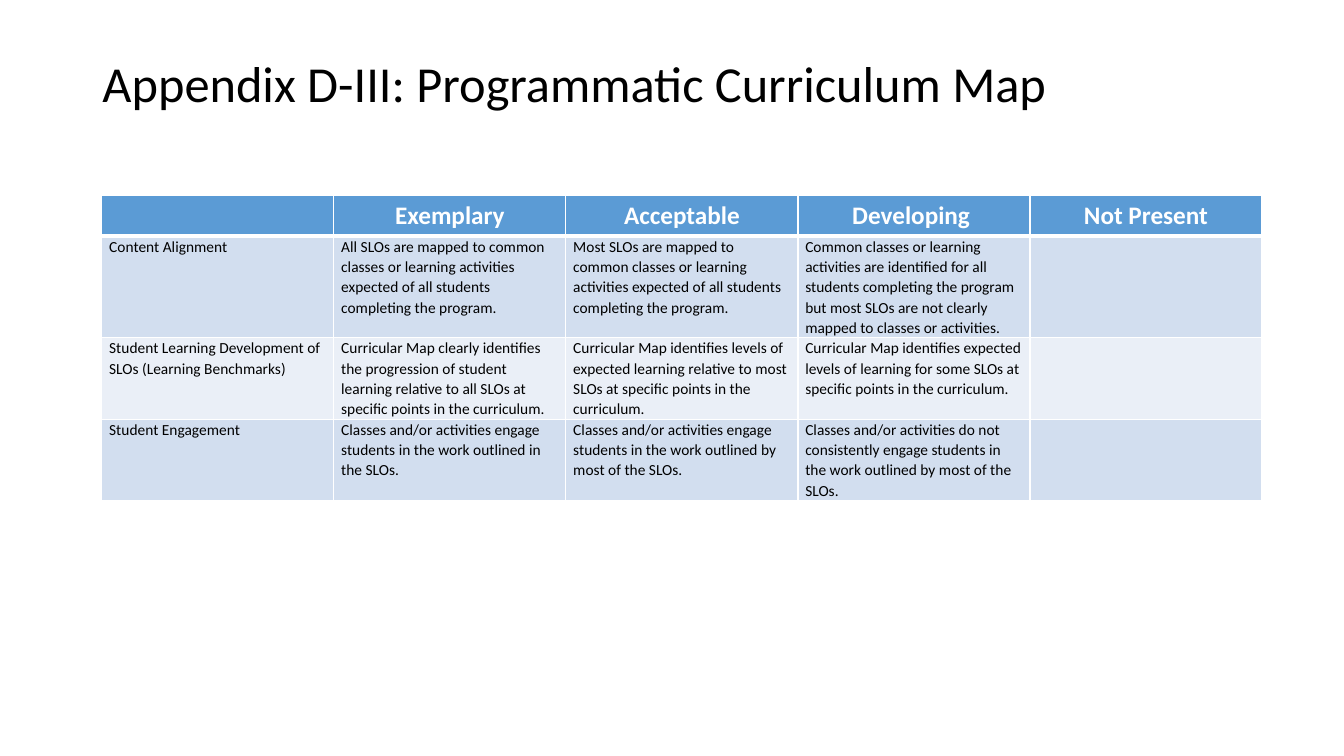
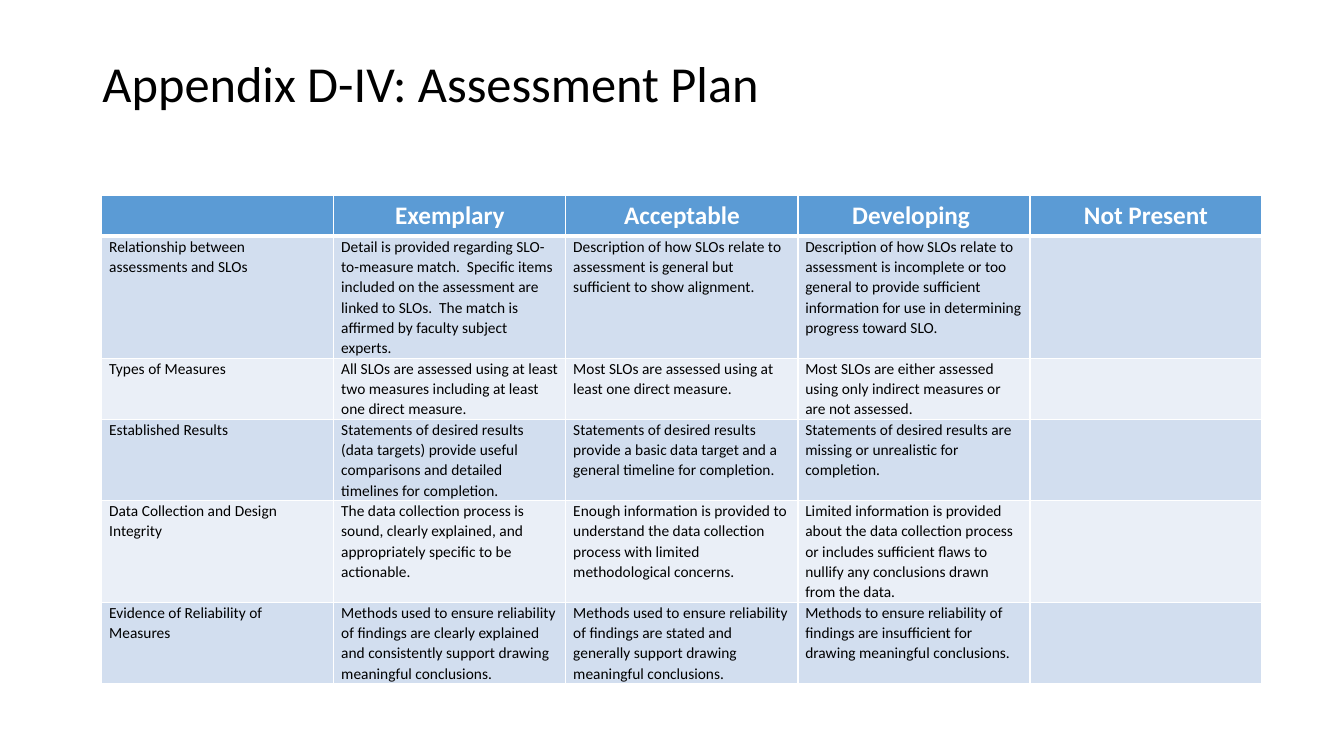
from dataclasses import dataclass

from lxml.etree import SubElement
from pptx import Presentation
from pptx.dml.color import RGBColor
from pptx.enum.text import MSO_ANCHOR, MSO_AUTO_SIZE, PP_ALIGN
from pptx.oxml.ns import qn
from pptx.presentation import Presentation as Deck
from pptx.slide import Slide
from pptx.table import _Cell as Cell
from pptx.util import Emu, Pt

COLORS = {
    "text": "000000",
    "white": "FFFFFF",
    "header": "5B9BD5",
    "odd_row": "D2DEEF",
    "even_row": "EAEFF7",
}
FONT = "Calibri"
LEVELS = ("Exemplary", "Acceptable", "Developing ", "Not Present")
TITLE_ONLY = 5
TABLE_LEFT, TABLE_TOP = 97, 186
COLUMN_WIDTH, ROW_HEIGHT = 221, 39
CELL_INSET = 7


@dataclass(frozen=True)
class Criterion:
    name: str
    exemplary: str
    acceptable: str
    developing: str
    not_present: str = ""

    def texts(self) -> tuple[str, ...]:
        return (self.name, self.exemplary, self.acceptable,
                self.developing, self.not_present)


@dataclass(frozen=True)
class Rubric:
    title: str
    criteria: tuple[Criterion, ...]


RUBRICS = (
    Rubric("Appendix D-III: Programmatic Curriculum Map", (
        Criterion(
            "Content Alignment",
            "All SLOs are mapped to common classes or learning activities "
            "expected of all students completing the program.",
            "Most SLOs are mapped to common classes or learning activities "
            "expected of all students completing the program.",
            "Common classes or learning activities are identified for all "
            "students completing the program but most SLOs are not clearly "
            "mapped to classes or activities.",
        ),
        Criterion(
            "Student Learning Development of SLOs (Learning Benchmarks)",
            "Curricular Map clearly identifies the progression of student "
            "learning relative to all SLOs at specific points in the curriculum.",
            "Curricular Map identifies levels of expected learning relative to "
            "most SLOs at specific points in the curriculum.",
            "Curricular Map identifies expected levels of learning for some "
            "SLOs at specific points in the curriculum.",
        ),
        Criterion(
            "Student Engagement",
            "Classes and/or activities engage students in the work outlined "
            "in the SLOs.",
            "Classes and/or activities engage students in the work outlined "
            "by most of the SLOs.",
            "Classes and/or activities do not consistently engage students in "
            "the work outlined by most of the SLOs.",
        ),
    )),
    Rubric("Appendix D-IV: Assessment Plan", (
        Criterion(
            "Relationship between assessments and SLOs",
            "Detail is provided regarding SLO-to-measure match.  Specific items "
            "included on the assessment are linked to SLOs.  The match is "
            "affirmed by faculty subject experts.",
            "Description of how SLOs relate to assessment is general but "
            "sufficient to show alignment.",
            "Description of how SLOs relate to assessment is incomplete or too "
            "general to provide sufficient information for use in determining "
            "progress toward SLO.",
        ),
        Criterion(
            "Types of Measures",
            "All SLOs are assessed using at least two measures including at "
            "least one direct measure.",
            "Most SLOs are assessed using at least one direct measure.",
            "Most SLOs are either assessed using only indirect measures or are "
            "not assessed.",
        ),
        Criterion(
            "Established Results",
            "Statements of desired results (data targets) provide useful "
            "comparisons and detailed timelines for completion.",
            "Statements of desired results provide a basic data target and a "
            "general timeline for completion.",
            "Statements of desired results are missing or unrealistic for "
            "completion.",
        ),
        Criterion(
            "Data Collection and Design Integrity",
            "The data collection process is sound, clearly explained, and "
            "appropriately specific to be actionable.",
            "Enough information is provided to understand the data collection "
            "process with limited methodological concerns.",
            "Limited information is provided about the data collection process "
            "or includes sufficient flaws to nullify any conclusions drawn from "
            "the data.",
        ),
        Criterion(
            "Evidence of Reliability of Measures",
            "Methods used to ensure reliability of findings are clearly "
            "explained and consistently support drawing meaningful conclusions.",
            "Methods used to ensure reliability of findings are stated and "
            "generally support drawing meaningful conclusions.",
            "Methods to ensure reliability of findings are insufficient for "
            "drawing meaningful conclusions.",
        ),
    )),
)


def px(length: int) -> Emu:
    return Emu(length * 9525)


def color(name: str) -> RGBColor:
    return RGBColor.from_string(COLORS[name])


def add_title(page: Slide, text: str) -> None:
    box = page.shapes.title
    box.left, box.top, box.width, box.height = map(px, (88, 38, 1104, 89))
    frame = box.text_frame
    frame.text = text
    frame.auto_size = MSO_AUTO_SIZE.NONE
    frame.vertical_anchor = MSO_ANCHOR.MIDDLE
    para = frame.paragraphs[0]
    para.alignment = PP_ALIGN.LEFT
    para.line_spacing = 0.9
    para.font.name = FONT
    para.font.size = Pt(36)
    para.font.color.rgb = color("text")


def set_borders(cell: Cell, top: int = 1, bottom: int = 1) -> None:
    properties = cell._tc.get_or_add_tcPr()
    widths = {"lnL": 1, "lnR": 1, "lnT": top, "lnB": bottom}
    for tag, width in widths.items():
        line = SubElement(properties, qn(f"a:{tag}"), w=str(Pt(width)))
        fill = SubElement(line, qn("a:solidFill"))
        SubElement(fill, qn("a:srgbClr"), val=COLORS["white"])


def fill_cell(cell: Cell, text: str, fill: str, row: int) -> None:
    is_header = row == 0
    set_borders(cell, top=3 if row == 1 else 1, bottom=3 if is_header else 1)
    cell.fill.solid()
    cell.fill.fore_color.rgb = color(fill)
    if not text:
        return
    cell.text = text
    para = cell.text_frame.paragraphs[0]
    para.font.name = FONT
    para.font.bold = is_header
    para.font.size = Pt(18 if is_header else 11)
    para.font.color.rgb = color("white" if is_header else "text")
    if is_header:
        para.alignment = PP_ALIGN.CENTER
        return
    para.line_spacing = 1.07
    para.space_after = Pt(8)
    cell.margin_left = cell.margin_right = px(CELL_INSET)
    cell.margin_top = cell.margin_bottom = 0


def add_rubric_table(page: Slide, criteria: tuple[Criterion, ...]) -> None:
    rows = [("", *LEVELS), *(criterion.texts() for criterion in criteria)]
    column_count = len(rows[0])
    table = page.shapes.add_table(
        len(rows), column_count, px(TABLE_LEFT), px(TABLE_TOP),
        px(COLUMN_WIDTH * column_count), px(ROW_HEIGHT * len(rows)),
    ).table
    for column in table.columns:
        column.width = px(COLUMN_WIDTH)
    for row, texts in enumerate(rows):
        table.rows[row].height = px(ROW_HEIGHT)
        band = "odd_row" if row % 2 else "even_row"
        fill = "header" if row == 0 else band
        for column, text in enumerate(texts):
            fill_cell(table.cell(row, column), text, fill, row)


def add_rubric(deck: Deck, rubric: Rubric) -> None:
    page = deck.slides.add_slide(deck.slide_layouts[TITLE_ONLY])
    add_title(page, rubric.title)
    add_rubric_table(page, rubric.criteria)


def main() -> None:
    deck = Presentation()
    deck.slide_width, deck.slide_height = px(1280), px(720)
    for rubric in RUBRICS:
        add_rubric(deck, rubric)
    deck.save("out.pptx")


if __name__ == "__main__":
    main()
